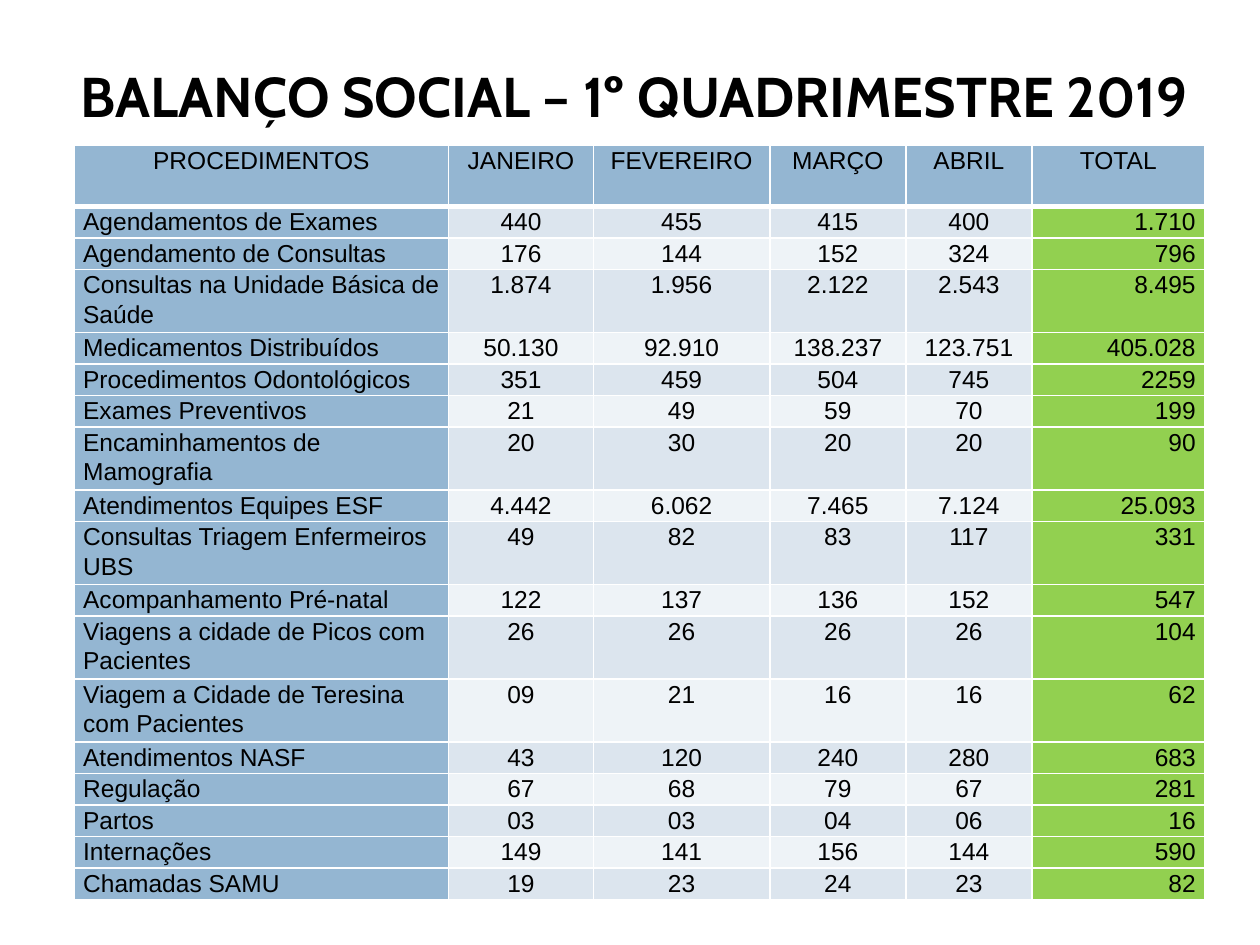
import pptx
import pptx.util
import pptx.dml.color
import pptx.enum.text
import pptx.oxml.ns
import lxml.etree

Inches = pptx.util.Inches
ALIGN = pptx.enum.text.PP_ALIGN

BLUE, GREEN, WHITE, BLACK = "94B6D2", "92D050", "FFFFFF", "000000"
BAND_COLORS = ["EEF3F7", "DCE5EE"]

COLUMN_WIDTHS = [2.97, 1.15, 1.4, 1.08, 1, 1.37]
HEADER_HEIGHT, LINE_HEIGHT = 0.49, 0.25
WRAP_LENGTH = 27  # longer procedure names take two lines

HEADERS = ["PROCEDIMENTOS", "JANEIRO", "FEVEREIRO", "MARÇO", "ABRIL", "TOTAL"]
PROCEDURES = [
    ["Agendamentos de Exames", "440", "455", "415", "400", "1.710"],
    ["Agendamento de Consultas", "176", "144", "152", "324", "796"],
    ["Consultas na Unidade Básica de Saúde", "1.874", "1.956", "2.122", "2.543", "8.495"],
    ["Medicamentos Distribuídos", "50.130", "92.910", "138.237", "123.751", "405.028"],
    ["Procedimentos Odontológicos", "351", "459", "504", "745", "2259"],
    ["Exames Preventivos", "21", "49", "59", "70", "199"],
    ["Encaminhamentos de Mamografia", "20", "30", "20", "20", "90"],
    ["Atendimentos Equipes ESF", "4.442", "6.062", "7.465", "7.124", "25.093"],
    ["Consultas Triagem Enfermeiros UBS", "49", "82", "83", "117", "331"],
    ["Acompanhamento Pré-natal", "122", "137", "136", "152", "547"],
    ["Viagens a cidade de Picos com Pacientes", "26", "26", "26", "26", "104"],
    ["Viagem a Cidade de Teresina com Pacientes", "09", "21", "16", "16", "62"],
    ["Atendimentos NASF", "43", "120", "240", "280", "683"],
    ["Regulação", "67", "68", "79", "67", "281"],
    ["Partos", "03", "03", "04", "06", "16"],
    ["Internações", "149", "141", "156", "144", "590"],
    ["Chamadas SAMU", "19", "23", "24", "23", "82"],
]


def color(hex_string):
    return pptx.dml.color.RGBColor.from_string(hex_string)


def write_text(text_frame, text, font="Arial", size=14, bold=False,
               align=ALIGN.CENTER, line_spacing=None):
    paragraph = text_frame.paragraphs[0]
    paragraph.alignment = align
    if line_spacing:
        paragraph.line_spacing = line_spacing
    run = paragraph.add_run()
    run.text = text
    run.font.name = font
    run.font.size = pptx.util.Pt(size)
    run.font.bold = bold
    run.font.color.rgb = color(BLACK)


def set_borders(cell, **widths):
    """Draw white borders; widths are points keyed by L, R, T and B."""
    properties = cell._tc.get_or_add_tcPr()
    for side, width in widths.items():
        line = lxml.etree.SubElement(properties, pptx.oxml.ns.qn(f"a:ln{side}"),
                                     w=str(pptx.util.Pt(width)))
        fill = lxml.etree.SubElement(line, pptx.oxml.ns.qn("a:solidFill"))
        lxml.etree.SubElement(fill, pptx.oxml.ns.qn("a:srgbClr"), val=WHITE)


def cell_format(row, column):
    """Return the fill and alignment for a position in the table."""
    if row == 0:
        return BLUE, ALIGN.CENTER
    if column == 0:
        return BLUE, ALIGN.LEFT
    if column == len(HEADERS) - 1:
        return GREEN, ALIGN.RIGHT
    return BAND_COLORS[row % 2], ALIGN.CENTER


def add_title(slide, left, top, width, height):
    shape = slide.shapes.add_textbox(Inches(left), Inches(top), Inches(width), Inches(height))
    shape.text_frame.word_wrap = True
    write_text(shape.text_frame, "BALANÇO SOCIAL – 1º QUADRIMESTRE 2019",
               font="Cabin", size=32, bold=True)


def add_procedure_table(slide, left, top, width, height):
    rows = [HEADERS] + PROCEDURES
    table = slide.shapes.add_table(len(rows), len(HEADERS), Inches(left), Inches(top),
                                   Inches(width), Inches(height)).table
    table.first_row = False
    table.horz_banding = False

    # Column widths and row heights
    for column, column_width in zip(table.columns, COLUMN_WIDTHS):
        column.width = Inches(column_width)
    table.rows[0].height = Inches(HEADER_HEIGHT)
    for index, procedure in enumerate(PROCEDURES, 1):
        lines = 2 if len(procedure[0]) > WRAP_LENGTH else 1
        table.rows[index].height = Inches(lines * LINE_HEIGHT)

    # Cells
    for row, values in enumerate(rows):
        for column, text in enumerate(values):
            cell = table.cell(row, column)
            fill, align = cell_format(row, column)
            cell.margin_left = cell.margin_right = Inches(0.07)
            cell.margin_top = cell.margin_bottom = 0
            set_borders(cell, L=1, R=1, T=3 if row == 1 else 1, B=3 if row == 0 else 1)
            cell.fill.solid()
            cell.fill.fore_color.rgb = color(fill)
            write_text(cell.text_frame, text, align=align, line_spacing=1.07)


def main():
    presentation = pptx.Presentation()
    presentation.slide_width = Inches(10)
    presentation.slide_height = Inches(7.5)
    slide = presentation.slides.add_slide(presentation.slide_layouts[6])
    add_title(slide, 0.51, 0.44, 9.06, 0.64)
    add_procedure_table(slide, 0.59, 1.15, 8.98, 5.98)
    presentation.save("out.pptx")


if __name__ == "__main__":
    main()
